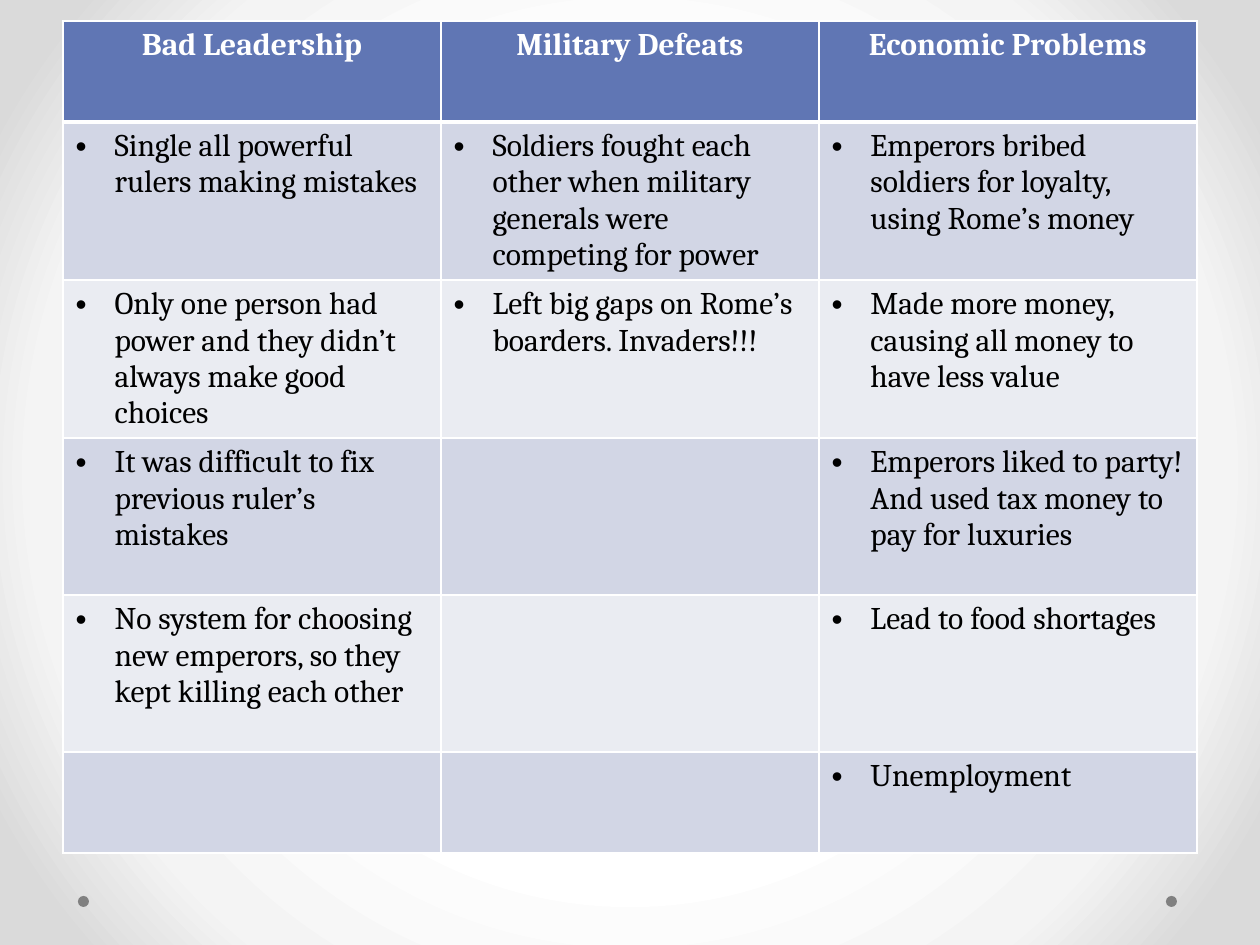
from lxml.etree import SubElement as Sub
from pptx import Presentation
from pptx.dml.color import RGBColor as Rgb
from pptx.enum.shapes import MSO_SHAPE as Geo
from pptx.enum.text import PP_ALIGN as Align
from pptx.oxml.ns import qn
from pptx.util import Pt

PX = 7257
FONT = "Cambria"
HEAD, ODD, EVEN = "6076B4", "D2D6E5", "EAECF2"
ROWS = [
    ["Bad Leadership", "Military Defeats", "Economic Problems"],
    ["Single all powerful rulers making mistakes",
     "Soldiers fought each other when military generals were competing for power",
     "Emperors bribed soldiers for loyalty, using Rome’s money"],
    ["Only one person had power and they didn’t always make good choices",
     "Left big gaps on Rome’s boarders. Invaders!!!",
     "Made more money, causing all money to have less value"],
    ["It was difficult to fix previous ruler’s mistakes", "",
     "Emperors liked to party! And used tax money to pay for luxuries"],
    ["No system for choosing new emperors, so they kept killing each other", "",
     "Lead to food shortages"],
    ["", "", "Unemployment"],
]
HIGH = [101, 157, 157, 157, 157, 101]


def px(*nums):
    return [n * PX for n in nums]


def paint(fill, hue):
    fill.solid()
    fill.fore_color.rgb = Rgb.from_string(hue)


def back(slide):
    fill = slide.background.fill
    fill.gradient()
    grad = slide.background._cSld.find(".//" + qn("a:gradFill"))
    for kid in list(grad):
        grad.remove(kid)
    stops = Sub(grad, qn("a:gsLst"))
    for pos, hue in ((50, "FFFFFF"), (76, "F4F4F4"), (92, "DADADA")):
        stop = Sub(stops, qn("a:gs"), pos=str(pos * 1000))
        Sub(stop, qn("a:srgbClr"), val=hue)
    ring = Sub(grad, qn("a:path"), path="circle")
    Sub(ring, qn("a:fillToRect"), {side: "50000" for side in "ltrb"})


def dots(slide, box):
    left, top, wide, size = box
    for x in (left, left + wide - size):
        dot = slide.shapes.add_shape(Geo.OVAL, *px(x, top, size, size))
        dot.shadow.inherit = False
        paint(dot.fill, "808080")
        dot.line.fill.background()


def edge(cell, row):
    props = cell._tc.get_or_add_tcPr()
    thick = {"T": row == 1, "B": row == 0}
    for side in "LRTB":
        width = Pt(3 if thick.get(side) else 1)
        line = Sub(props, qn("a:ln" + side), w=str(width))
        Sub(Sub(line, qn("a:solidFill")), qn("a:srgbClr"), val="FFFFFF")


def bullet(para):
    props = para._p.get_or_add_pPr()
    gap = 39 * PX
    props.set("marL", str(gap))
    props.set("indent", str(-gap))
    Sub(props, qn("a:buFont"), typeface="Arial")
    Sub(props, qn("a:buChar"), char="•")


def write(cell, text, row):
    cell.text_frame.text = text
    para = cell.text_frame.paragraphs[0]
    para.font.size = Pt(18)
    if row == 0:
        para.alignment = Align.CENTER
    elif text:
        bullet(para)
    for run in para.runs:
        font = run.font
        font.name, font.size, font.bold = FONT, Pt(18), row == 0
        paint(font.fill, "000000" if row else "FFFFFF")


def grid(slide, box):
    table = slide.shapes.add_table(len(ROWS), len(ROWS[0]), *px(*box)).table
    for row, (texts, high) in enumerate(zip(ROWS, HIGH)):
        table.rows[row].height = high * PX
        hue = HEAD if row == 0 else ODD if row % 2 else EVEN
        for col, text in enumerate(texts):
            cell = table.cell(row, col)
            edge(cell, row)
            paint(cell.fill, hue)
            write(cell, text, row)


def main():
    deck = Presentation()
    deck.slide_width, deck.slide_height = px(1260, 945)
    slide = deck.slides.add_slide(deck.slide_layouts[6])
    back(slide)
    dots(slide, (78, 896, 1099, 11))
    grid(slide, (63, 21, 1134, sum(HIGH)))
    deck.save("out.pptx")


if __name__ == "__main__":
    main()
